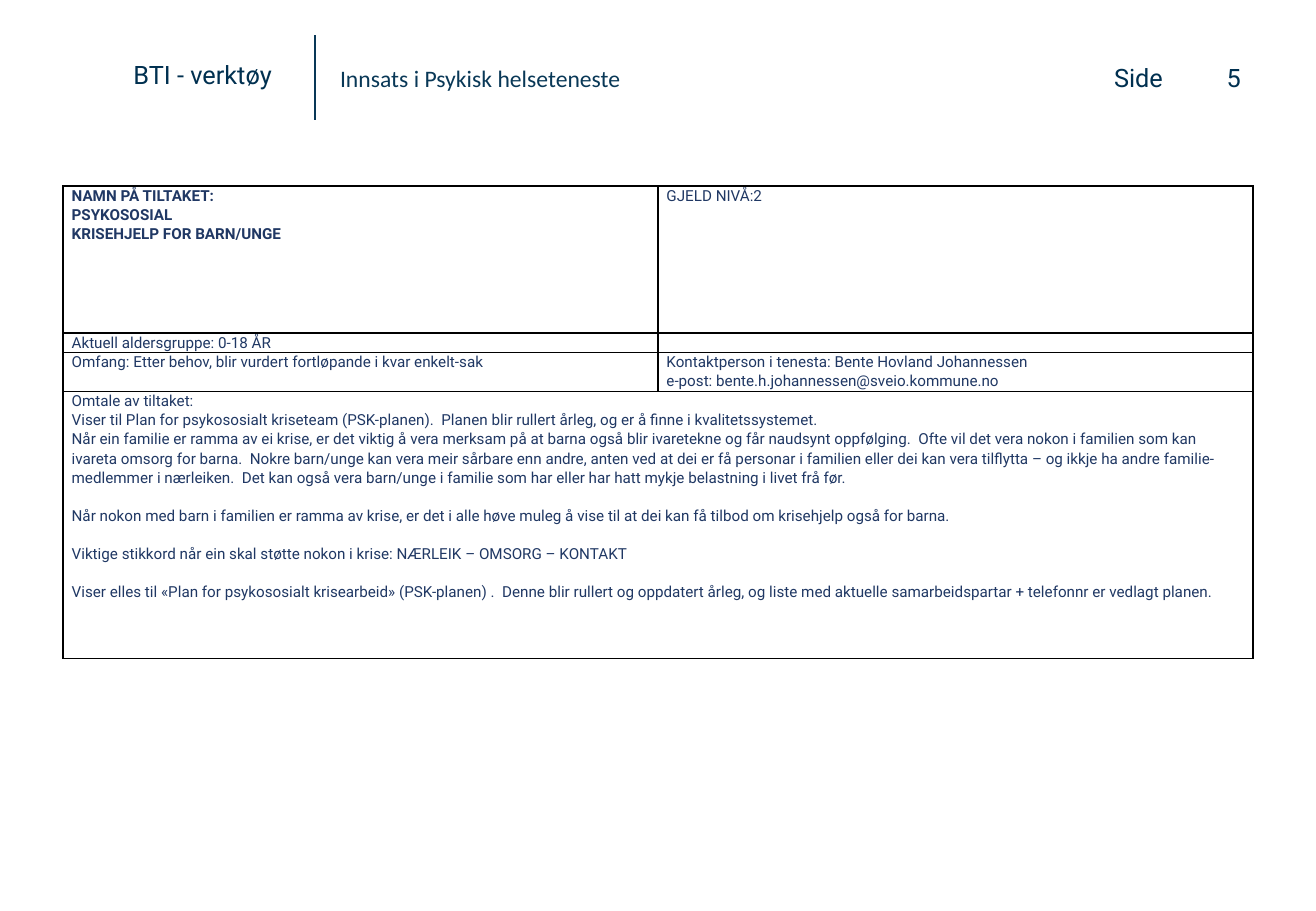
from pptx import Presentation
from pptx.dml.color import RGBColor
from pptx.enum.shapes import MSO_CONNECTOR
from pptx.enum.text import MSO_ANCHOR, PP_ALIGN
from pptx.oxml import parse_xml
from pptx.oxml.ns import nsdecls, qn
from pptx.util import Inches, Pt

NAVY = RGBColor(0x00, 0x30, 0x50)
TEAL = RGBColor(0x09, 0x38, 0x57)
BLUE = RGBColor(0x20, 0x38, 0x64)

prs = Presentation()
prs.slide_width, prs.slide_height = Inches(10.83), Inches(7.5)
slide = prs.slides.add_slide(prs.slide_layouts[6])

# Page header
header = [
    ("BTI - verktøy", (1, 0.44, 2.21, 0.35), "Roboto", 15, NAVY, PP_ALIGN.LEFT, MSO_ANCHOR.TOP),
    ("Side", (9.07, 0.46, 1.23, 0.35), "Roboto", 15, NAVY, PP_ALIGN.LEFT, MSO_ANCHOR.TOP),
    ("Innsats i Psykisk helseteneste", (2.7, 0.29, 4.29, 0.7), "Calibri", 14, TEAL,
     PP_ALIGN.LEFT, MSO_ANCHOR.MIDDLE),
    ("5", (8.62, 0.35, 1.69, 0.58), "Roboto", 15, NAVY, PP_ALIGN.RIGHT, MSO_ANCHOR.MIDDLE),
]
for label, place, typeface, size, color, align, anchor in header:
    frame = slide.shapes.add_textbox(*map(Inches, place)).text_frame
    frame.word_wrap = True
    frame.vertical_anchor = anchor
    frame.text = label
    line = frame.paragraphs[0]
    line.alignment = align
    font = line.runs[0].font
    font.name, font.size, font.color.rgb = typeface, Pt(size), color

divider = slide.shapes.add_connector(
    MSO_CONNECTOR.STRAIGHT, Inches(2.59), Inches(0.29), Inches(2.59), Inches(0.99))
divider.line.color.rgb = TEAL
divider.line.width = Pt(1)
divider._element.spPr.append(parse_xml(f"<a:effectLst {nsdecls('a')}/>"))

# Description of the measure: one list of paragraphs per cell
measure = [
    [["NAMN PÅ TILTAKET:", "PSYKOSOSIAL", "KRISEHJELP FOR BARN/UNGE"], ["GJELD NIVÅ:2"]],
    [["Aktuell aldersgruppe: 0-18 ÅR"], []],
    [["Omfang: Etter behov, blir vurdert fortløpande i kvar enkelt-sak"],
     ["Kontaktperson i tenesta: Bente Hovland Johannessen",
      "e-post: bente.h.johannessen@sveio.kommune.no"]],
    [["Omtale av tiltaket:",
      "Viser til Plan for psykososialt kriseteam (PSK-planen).  Planen blir rullert årleg, "
      "og er å finne i kvalitetssystemet.",
      "Når ein familie er ramma av ei krise, er det viktig å vera merksam på at barna også blir "
      "ivaretekne og får naudsynt oppfølging.  Ofte vil det vera nokon i familien som kan ivareta "
      "omsorg for barna.  Nokre barn/unge kan vera meir sårbare enn andre, anten ved at dei er få "
      "personar i familien eller dei kan vera tilflytta – og ikkje ha andre familie-medlemmer i "
      "nærleiken.  Det kan også vera barn/unge i familie som har eller har hatt mykje belastning "
      "i livet frå før.",
      "Når nokon med barn i familien er ramma av krise, er det i alle høve muleg å vise til at "
      "dei kan få tilbod om krisehjelp også for barna.",
      "Viktige stikkord når ein skal støtte nokon i krise: NÆRLEIK – OMSORG – KONTAKT",
      "Viser elles til «Plan for psykososialt krisearbeid» (PSK-planen) .  Denne blir rullert og "
      "oppdatert årleg, og liste med aktuelle samarbeidspartar + telefonnr er vedlagt planen."],
     []],
]
row_heights = [1.21, 0.16, 0.31, 2.2]
table = slide.shapes.add_table(
    4, 2, Inches(0.52), Inches(1.53), Inches(9.79), Inches(sum(row_heights))).table
table.first_row = table.horz_banding = False
for row, height in zip(table.rows, row_heights):
    row.height = Inches(height)
table.cell(3, 0).merge(table.cell(3, 1))

for r, cells in enumerate(measure):
    for c, paragraphs in enumerate(cells):
        cell = table.cell(r, c)
        cell.margin_left = cell.margin_right = Inches(0.07)
        cell.margin_top = cell.margin_bottom = 0
        cell_format = cell._tc.get_or_add_tcPr()
        for side in ("lnL", "lnR", "lnT", "lnB"):
            cell_format.append(parse_xml(
                f'<a:{side} {nsdecls("a")} w="12700"><a:solidFill>'
                f'<a:srgbClr val="000000"/></a:solidFill></a:{side}>'))
        cell.fill.background()
        cell.text_frame.text = "\n".join(paragraphs)
        for i, paragraph in enumerate(cell.text_frame.paragraphs):
            paragraph.line_spacing = 1.07
            if i >= 3:  # the closing remarks stand one line apart
                paragraph.space_before = Pt(11.3)
            for run in paragraph.runs:
                font = run.font
                font.name, font.size, font.color.rgb = "Roboto", Pt(9), BLUE
                font.bold = (r, c) == (0, 0)
            if not paragraph.runs:  # keeps the empty cell's row low
                paragraph._p.get_or_add_endParaRPr().set("sz", "900")

prs.save("out.pptx")
